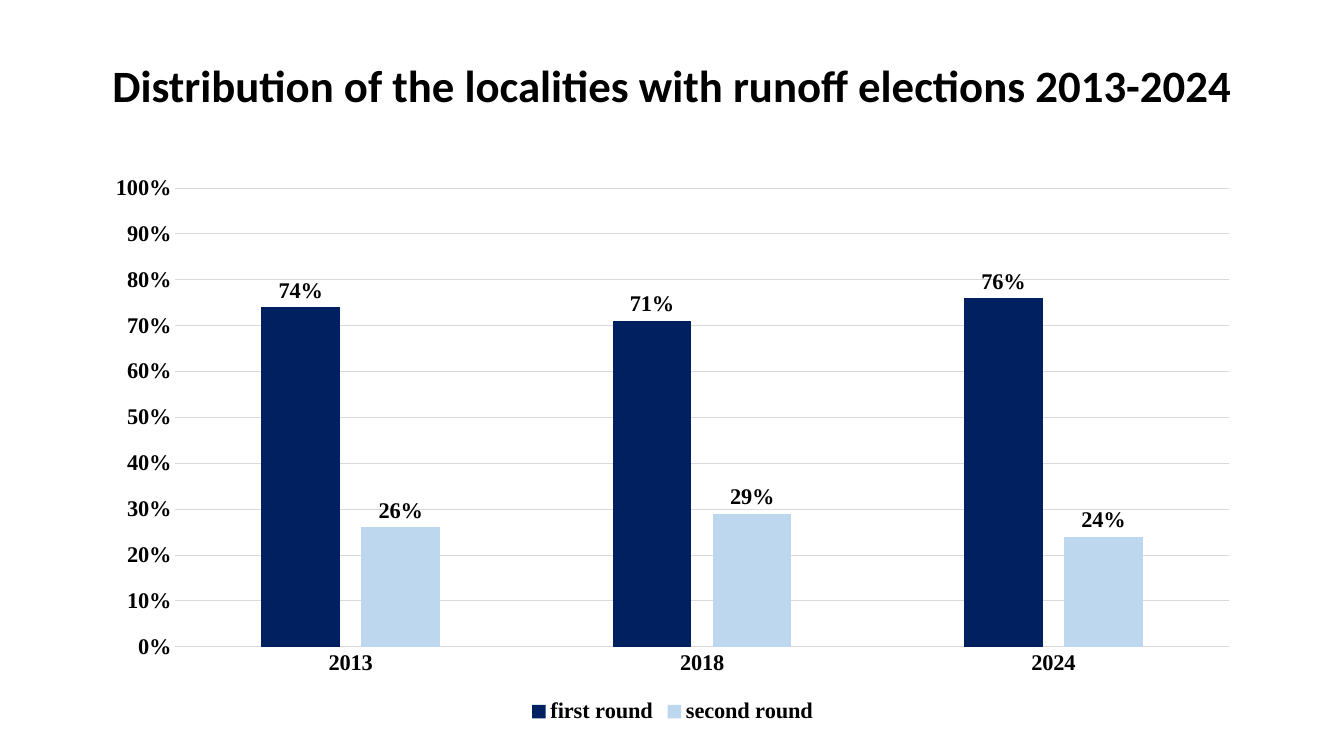
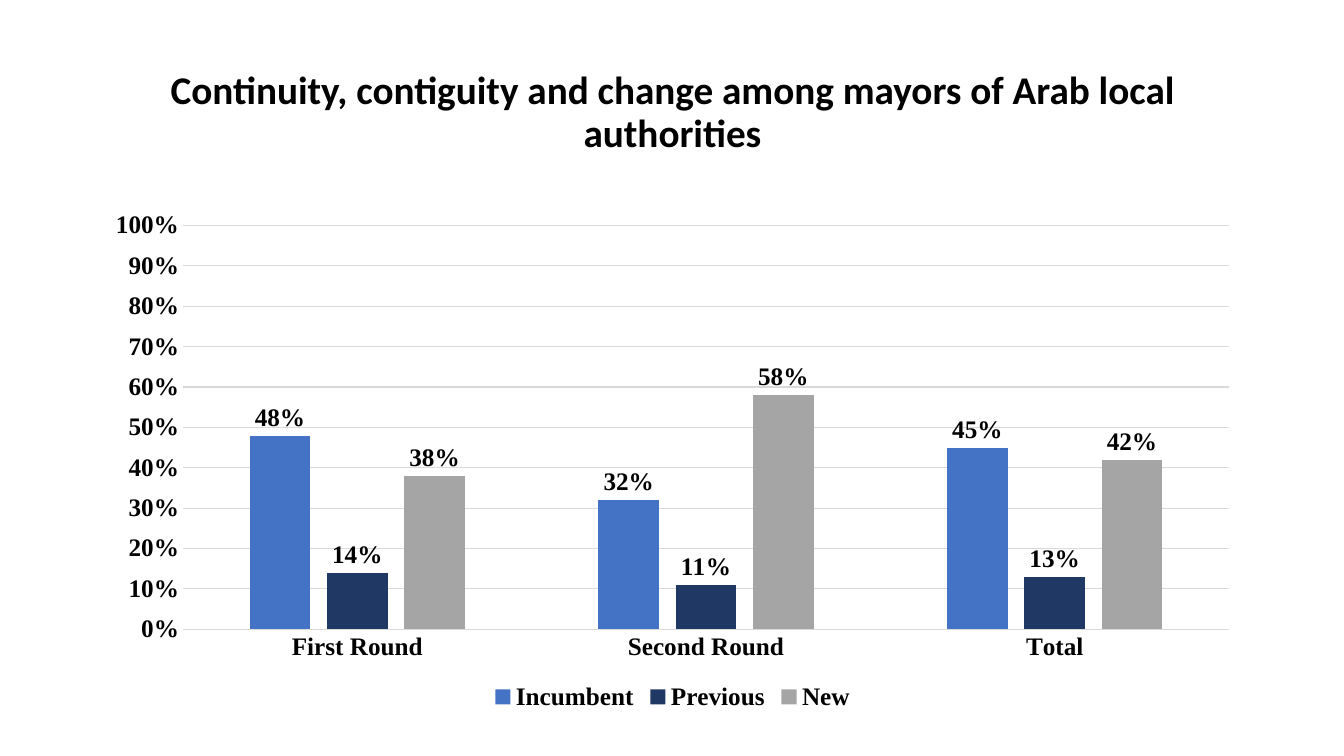
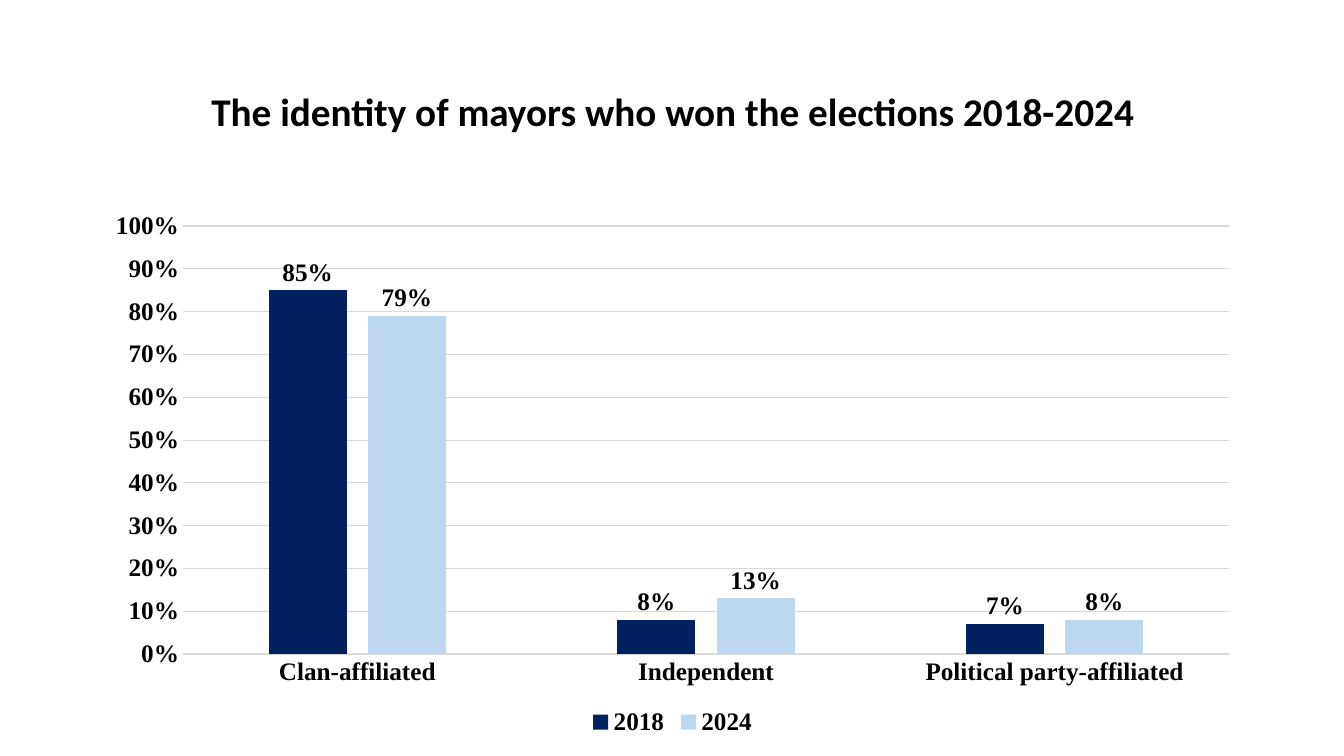
from dataclasses import dataclass

from pptx import Presentation
from pptx.chart.data import CategoryChartData
from pptx.dml.color import RGBColor
from pptx.enum.chart import XL_CHART_TYPE, XL_LABEL_POSITION, XL_LEGEND_POSITION, XL_TICK_MARK
from pptx.enum.text import MSO_ANCHOR, PP_ALIGN
from pptx.util import Inches, Pt


@dataclass(frozen=True)
class Theme:
    text: str = "000000"
    grid: str = "D9D9D9"
    navy: str = "002060"
    pale_blue: str = "BDD7EE"
    blue: str = "4472C4"
    dark_blue: str = "203864"
    gray: str = "A5A5A5"
    title_font: str = "Calibri"
    chart_font: str = "Times New Roman"
    large_title: int = 32
    title: int = 28
    small_chart: int = 16
    chart: int = 18
    grid_width: float = 0.75
    percent: str = "0%"


THEME = Theme()
LEFT, WIDTH = 0.92, 11.5

SLIDES = [
    {
        "title": "Distribution of the localities with runoff elections 2013-2024",
        "title_box": (LEFT, 0.27, WIDTH, 1.2),
        "title_size": THEME.large_title,
        "chart_box": (LEFT, 1.63, WIDTH, 5.6),
        "chart_size": THEME.small_chart,
        "categories": ["2013", "2018", "2024"],
        "series": [
            ("first round", (0.74, 0.71, 0.76), THEME.navy),
            ("second round", (0.26, 0.29, 0.24), THEME.pale_blue),
        ],
    },
    {
        "title": "Continuity, contiguity and change among mayors of Arab local authorities",
        "title_box": (LEFT, 0.4, WIDTH, 1.45),
        "title_size": THEME.title,
        "chart_box": (LEFT, 2, WIDTH, 5.1),
        "chart_size": THEME.chart,
        "categories": ["First Round", "Second Round", "Total"],
        "series": [
            ("Incumbent", (0.48, 0.32, 0.45), THEME.blue),
            ("Previous", (0.14, 0.11, 0.13), THEME.dark_blue),
            ("New", (0.38, 0.58, 0.42), THEME.gray),
        ],
    },
    {
        "title": "The identity of mayors who won the elections 2018-2024",
        "title_box": (LEFT, 0.4, WIDTH, 1.45),
        "title_size": THEME.title,
        "chart_box": (LEFT, 2, WIDTH, 5.35),
        "chart_size": THEME.chart,
        "categories": ["Clan-affiliated", "Independent", "Political party-affiliated"],
        "series": [
            ("2018", (0.85, 0.08, 0.07), THEME.navy),
            ("2024", (0.79, 0.13, 0.08), THEME.pale_blue),
        ],
    },
]


def set_values(target, values):
    for name, value in values.items():
        setattr(target, name, value)


def style_font(font, name, size):
    set_values(font, {"name": name, "size": Pt(size), "bold": True})
    font.color.rgb = RGBColor.from_string(THEME.text)


def style_grid_line(line):
    line.color.rgb = RGBColor.from_string(THEME.grid)
    line.width = Pt(THEME.grid_width)


def add_title(page, box, text, size):
    frame = page.shapes.add_textbox(*map(Inches, box)).text_frame
    set_values(frame, {"word_wrap": True, "vertical_anchor": MSO_ANCHOR.MIDDLE})
    para = frame.paragraphs[0]
    set_values(para, {"alignment": PP_ALIGN.CENTER, "line_spacing": 0.9})
    span = para.add_run()
    span.text = text
    style_font(span.font, THEME.title_font, size)


def style_axes(chart):
    category_axis, value_axis = chart.category_axis, chart.value_axis
    for axis in (category_axis, value_axis):
        set_values(axis, {"major_tick_mark": XL_TICK_MARK.NONE, "minor_tick_mark": XL_TICK_MARK.NONE})
    set_values(value_axis, {
        "minimum_scale": 0,
        "maximum_scale": 1,
        "major_unit": 0.1,
        "has_major_gridlines": True,
    })
    set_values(value_axis.tick_labels, {"number_format": THEME.percent, "number_format_is_linked": False})
    value_axis.format.line.fill.background()
    style_grid_line(category_axis.format.line)
    style_grid_line(value_axis.major_gridlines.format.line)


def style_series(series, color):
    series.format.fill.solid()
    series.format.fill.fore_color.rgb = RGBColor.from_string(color)
    set_values(series.data_labels, {
        "show_value": True,
        "number_format": THEME.percent,
        "number_format_is_linked": False,
        "position": XL_LABEL_POSITION.OUTSIDE_END,
    })


def add_column_chart(page, box, categories, series_rows, size):
    data = CategoryChartData(number_format=THEME.percent)
    data.categories = categories
    for name, values, color in series_rows:
        data.add_series(name, values)
    chart = page.shapes.add_chart(
        XL_CHART_TYPE.COLUMN_CLUSTERED, *map(Inches, box), data
    ).chart
    set_values(chart, {"has_title": False, "has_legend": True})
    set_values(chart.legend, {"position": XL_LEGEND_POSITION.BOTTOM, "include_in_layout": False})
    plot = chart.plots[0]
    set_values(plot, {"gap_width": 219, "overlap": -27, "vary_by_categories": False})
    style_axes(chart)
    for series, (name, values, color) in zip(plot.series, series_rows):
        style_series(series, color)
    labelled = [chart.category_axis.tick_labels, chart.value_axis.tick_labels, chart.legend]
    labelled += [series.data_labels for series in plot.series]
    for part in [chart, *labelled]:
        style_font(part.font, THEME.chart_font, size)


def add_chart_slide(deck, content):
    page = deck.slides.add_slide(deck.slide_layouts[6])
    add_title(page, content["title_box"], content["title"], content["title_size"])
    add_column_chart(
        page, content["chart_box"], content["categories"], content["series"], content["chart_size"]
    )


def main():
    deck = Presentation()
    set_values(deck, {"slide_width": Inches(13.33), "slide_height": Inches(7.5)})
    for content in SLIDES:
        add_chart_slide(deck, content)
    deck.save("out.pptx")


if __name__ == "__main__":
    main()
